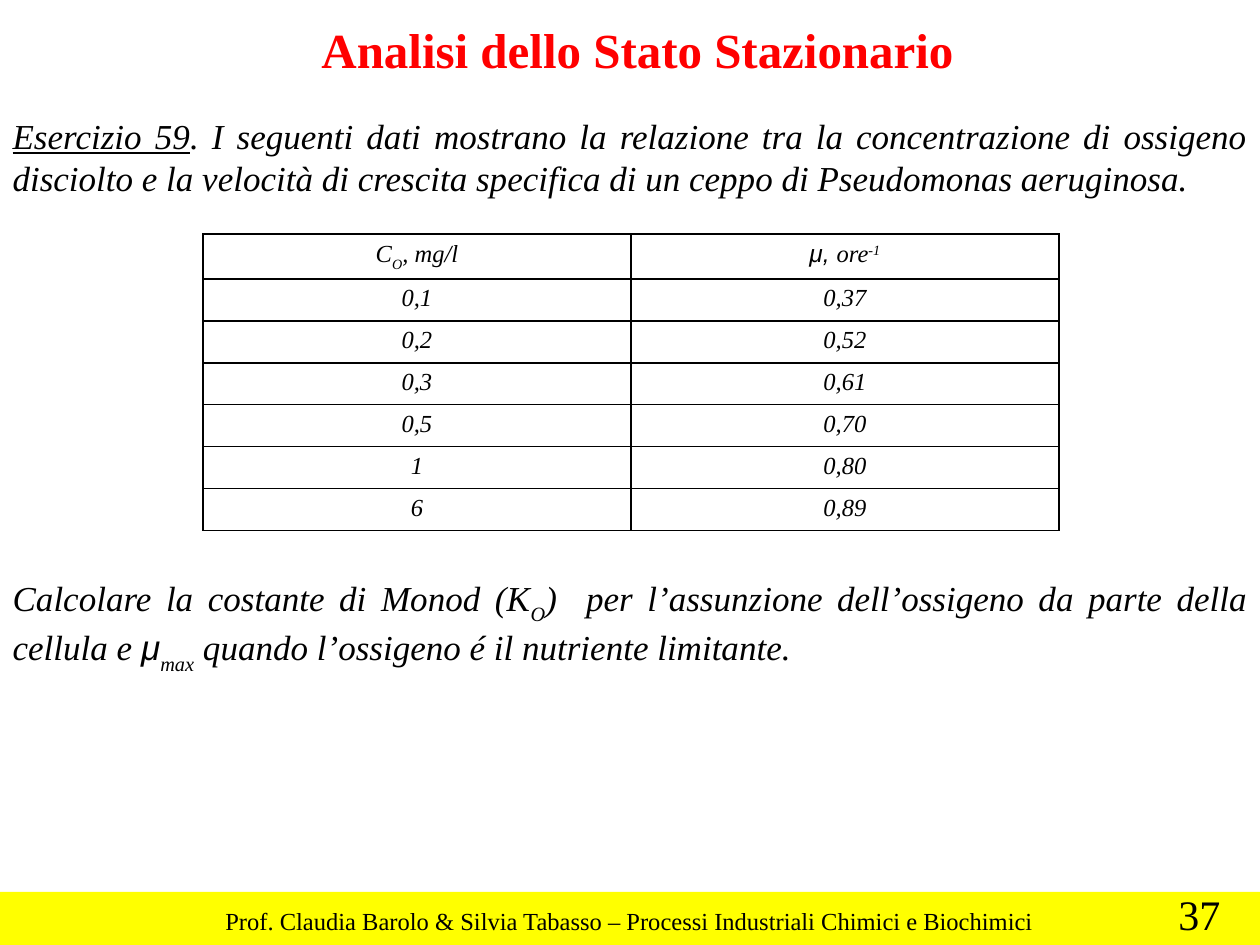
from lxml import etree
from pptx import Presentation, util as u
from pptx.dml.color import RGBColor
from pptx.enum import shapes, text
from pptx.oxml import ns

PX = 914400 // 126  # EMU in one pixel
SERIF, SANS = "Times New Roman", "Arial"
BLACK, RED, YELLOW = "000000", "FF0000", "FFFF00"
SUBSCRIPT, SUPERSCRIPT = -30, 30

GROWTH_DATA = [
    ("0,1", "0,37"),
    ("0,2", "0,52"),
    ("0,3", "0,61"),
    ("0,5", "0,70"),
    ("1", "0,80"),
    ("6", "0,89"),
]


def px(length):
    return u.Emu(length * PX)


def color(value):
    return RGBColor.from_string(value)


def add_run(paragraph, words, size, fill=BLACK, font=SERIF, bold=False,
            italic=False, underline=False, baseline=0):
    run = paragraph.add_run()
    run.text = words
    run.font.name, run.font.size = font, u.Pt(size)
    run.font.bold, run.font.italic = bold, italic
    run.font.underline = underline
    run.font.color.rgb = color(fill)
    if baseline:
        run.font._element.set("baseline", str(baseline * 1000))


def place(shape, left, top, width, height):
    shape.left, shape.top = px(left), px(top)
    shape.width, shape.height = px(width), px(height)


def set_frame(frame, wrap):
    frame.word_wrap = wrap
    frame.auto_size = text.MSO_AUTO_SIZE.NONE
    frame.vertical_anchor = text.MSO_ANCHOR.TOP


def add_title(slide, words):
    title = slide.shapes.title
    place(title, 308, 13, 659, 72)
    set_frame(title.text_frame, False)
    paragraph = title.text_frame.paragraphs[0]
    paragraph.alignment = text.PP_ALIGN.CENTER
    add_run(paragraph, words, 28, RED, bold=True)


def add_body(slide, paragraphs):
    """Fill the body with (space before, runs) pairs, without bullets."""
    body = slide.placeholders[1]
    place(body, 0, 108, 1260, 560)
    frame = body.text_frame
    set_frame(frame, True)
    for index, (space, runs) in enumerate(paragraphs):
        paragraph = frame.add_paragraph() if index else frame.paragraphs[0]
        paragraph.alignment = text.PP_ALIGN.JUSTIFY
        paragraph.space_before = u.Pt(space)
        properties = paragraph._p.get_or_add_pPr()
        properties.set("marL", "0")
        properties.set("indent", "0")
        etree.SubElement(properties, ns.qn("a:buNone"))
        for words, style in runs:
            add_run(paragraph, words, 20, italic=True, **style)


def add_label(slide, words, size, left, top, width, height):
    box = slide.shapes.add_textbox(*map(px, (left, top, width, height)))
    set_frame(box.text_frame, False)
    add_run(box.text_frame.paragraphs[0], words, size)


def add_band(slide, left, top, width, height, fill):
    band = slide.shapes.add_shape(shapes.MSO_SHAPE.RECTANGLE,
                                  *map(px, (left, top, width, height)))
    band.shadow.inherit = False
    band.fill.solid()
    band.fill.fore_color.rgb = color(fill)
    band.line.fill.background()


def set_borders(cell):
    properties = cell._tc.get_or_add_tcPr()
    for index, side in enumerate(("lnL", "lnR", "lnT", "lnB")):
        line = etree.Element(ns.qn("a:" + side), w=str(u.Pt(1)))
        fill = etree.SubElement(line, ns.qn("a:solidFill"))
        etree.SubElement(fill, ns.qn("a:srgbClr"), val=BLACK)
        properties.insert(index, line)


def add_table(slide, rows, left, top, column_width, row_height):
    columns = len(rows[0])
    table = slide.shapes.add_table(
        len(rows), columns, px(left), px(top),
        px(column_width * columns), px(row_height * len(rows))).table
    table.first_row = table.horz_banding = False
    for row, values in zip(table.rows, rows):
        row.height = px(row_height)
        for cell, runs in zip(row.cells, values):
            cell.fill.background()
            set_borders(cell)
            paragraph = cell.text_frame.paragraphs[0]
            paragraph.alignment = text.PP_ALIGN.CENTER
            for words, style in runs:
                add_run(paragraph, words, 14, italic=True, **style)


def main():
    presentation = Presentation()
    presentation.slide_width, presentation.slide_height = u.Inches(10), u.Inches(7.5)
    slide = presentation.slides.add_slide(presentation.slide_layouts[1])

    # Footer
    add_band(slide, 0, 892, 1260, 53, YELLOW)
    add_label(slide, "Prof. Claudia Barolo & Silvia Tabasso – "
              "Processi Industriali Chimici e Biochimici", 14, 213, 900, 845, 43)
    add_label(slide, "37", 24, 1166, 882, 67, 63)

    # Title and exercise, with room for the table between the paragraphs
    add_title(slide, "Analisi dello Stato Stazionario")
    exercise = [
        ("Esercizio 59", {"underline": True}),
        (". I seguenti dati mostrano la relazione tra la concentrazione di "
         "ossigeno disciolto e la velocità di crescita specifica di un ceppo "
         "di Pseudomonas aeruginosa.", {}),
    ]
    question = [
        ("Calcolare la costante di Monod (K", {}),
        ("O", {"baseline": SUBSCRIPT}),
        (")  per l’assunzione dell’ossigeno da parte della cellula e ", {}),
        ("μ", {"font": SANS}),
        ("max", {"baseline": SUBSCRIPT}),
        (" quando l’ossigeno é il nutriente limitante.", {}),
    ]
    add_body(slide, [(0, exercise), (216, question)])

    # Growth rate against dissolved oxygen
    header = [
        [("C", {}), ("O", {"baseline": SUBSCRIPT}), (", mg/l", {})],
        [("μ, ", {"font": SANS}), ("ore", {}), ("-1", {"baseline": SUPERSCRIPT})],
    ]
    data = [[[(value, {})] for value in values] for values in GROWTH_DATA]
    add_table(slide, [header] + data, 203, 234, 428, 42)

    presentation.save("out.pptx")


if __name__ == "__main__":
    main()
